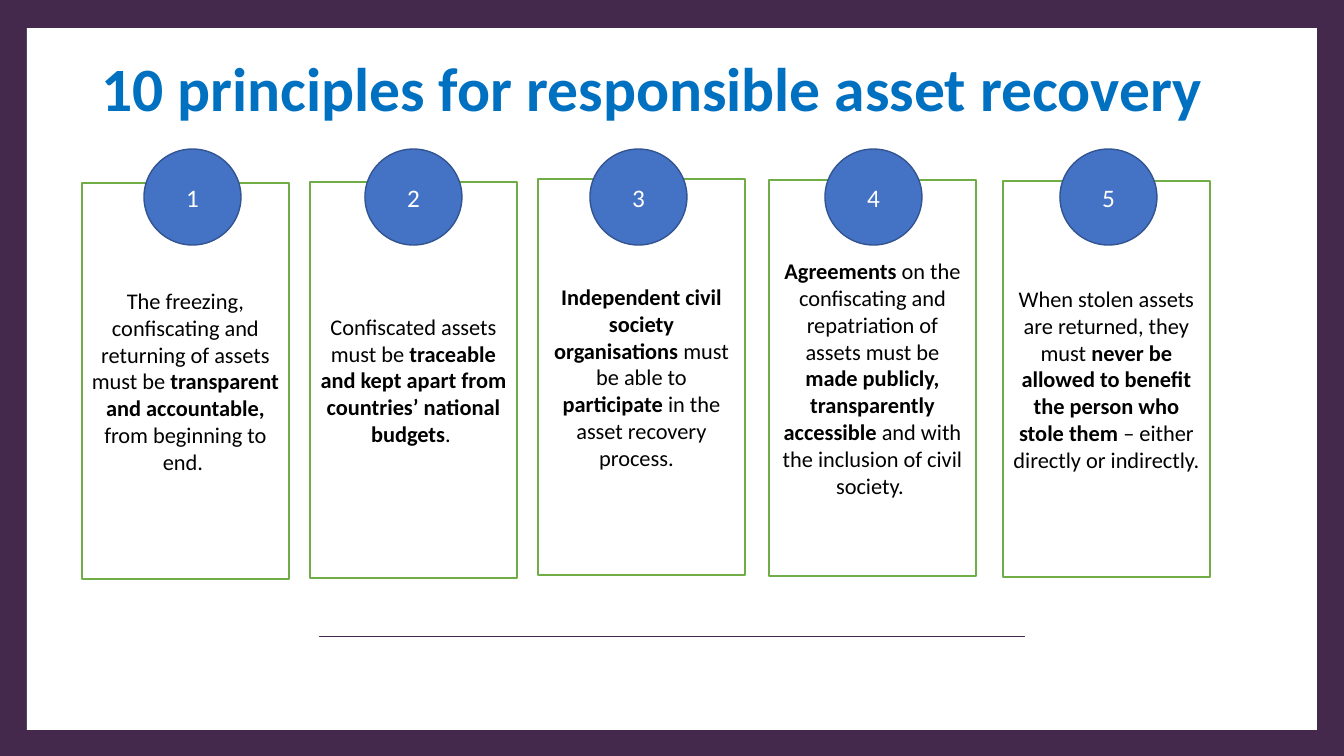
from pptx import Presentation
from pptx.dml.color import RGBColor
from pptx.enum.shapes import MSO_CONNECTOR, MSO_SHAPE
from pptx.enum.text import MSO_ANCHOR, MSO_AUTO_SIZE, PP_ALIGN
from pptx.oxml.ns import qn
from pptx.util import Pt
from lxml.etree import SubElement

PX = 914400 / 100.8


class Theme:
    font = "Calibri"
    plum, white, black = "44294D", "FFFFFF", "000000"
    title, green, blue, navy = "0070C0", "70AD47", "4472C4", "325491"
    head, body, badge = 44, 16, 18


def add_box(kind, area, fill, edge=None):
    shape = slide.shapes.add_shape(kind, *[round(n * PX) for n in area])
    shape.shadow.inherit = False
    shape.fill.solid()
    shape.fill.fore_color.rgb = RGBColor.from_string(fill)
    if edge:
        shape.line.color.rgb = RGBColor.from_string(edge)
        shape.line.width = Pt(1)
    else:
        shape.line.fill.background()
    return shape


def write(shape, text, size, color):
    """Fill the shape with centred text; parts between asterisks are bold."""
    para = shape.text_frame.paragraphs[0]
    para.alignment = PP_ALIGN.CENTER
    para.font.name = Theme.font
    para.font.size = Pt(size)
    para.font.color.rgb = RGBColor.from_string(color)
    for i, part in enumerate(text.split("*")):
        if part:
            run = para.add_run()
            run.text = part
            run.font.bold = i % 2 == 1
    return para


deck = Presentation()
deck.slide_width, deck.slide_height = round(1344 * PX), round(756 * PX)
slide = deck.slides.add_slide(deck.slide_layouts[5])

# Frame and rule
add_box(MSO_SHAPE.RECTANGLE, (0, 0, 1344, 756), Theme.plum)
add_box(MSO_SHAPE.RECTANGLE, (27, 28, 1290, 702), Theme.white)
ends = [round(n * PX) for n in (319, 636, 1025, 636)]
rule = slide.shapes.add_connector(MSO_CONNECTOR.STRAIGHT, *ends)
rule.line.color.rgb = RGBColor.from_string(Theme.plum)
rule.line.width = Pt(0.5)
SubElement(rule.element.spPr, qn("a:effectLst"))

# Title, raised above the frame
title = slide.shapes.title
title.left, title.top, title.width, title.height = [
    round(n * PX) for n in (49, 43, 1207, 87)]
title.element.getparent().append(title.element)
title.text_frame.auto_size = MSO_AUTO_SIZE.NONE
title.text_frame.vertical_anchor = MSO_ANCHOR.BOTTOM
head = write(title, "*10 principles for responsible asset recovery*",
             Theme.head, Theme.title)
head.line_spacing = 0.9

# Cards: left, top, badge left, text
cards = [
    (82, 183, 144, "The freezing, confiscating and returning of assets must be "
     "*transparent and accountable,* from beginning to end. "),
    (310, 182, 365, "Confiscated assets must be *traceable and kept apart from "
     "countries’ national budgets*. "),
    (538, 179, 590, "*Independent civil society organisations *must be able to "
     "*participate* in the asset recovery process.  "),
    (769, 180, 825, "*Agreements* on the confiscating and repatriation of assets "
     "must be *made publicly, transparently accessible *and with the inclusion "
     "of civil society. "),
    (1003, 181, 1060, "When stolen assets are returned, they must *never be "
     "allowed to benefit the person who stole them *– either directly or "
     "indirectly. "),
]
for left, top, _, text in cards:
    card = add_box(MSO_SHAPE.RECTANGLE, (left, top, 207, 396),
                   Theme.white, Theme.green)
    write(card, text, Theme.body, Theme.black)
for num, (_, _, left, _) in enumerate(cards, 1):
    badge = add_box(MSO_SHAPE.OVAL, (left, 149, 97, 96), Theme.blue, Theme.navy)
    write(badge, str(num), Theme.badge, Theme.white)

deck.save("out.pptx")
